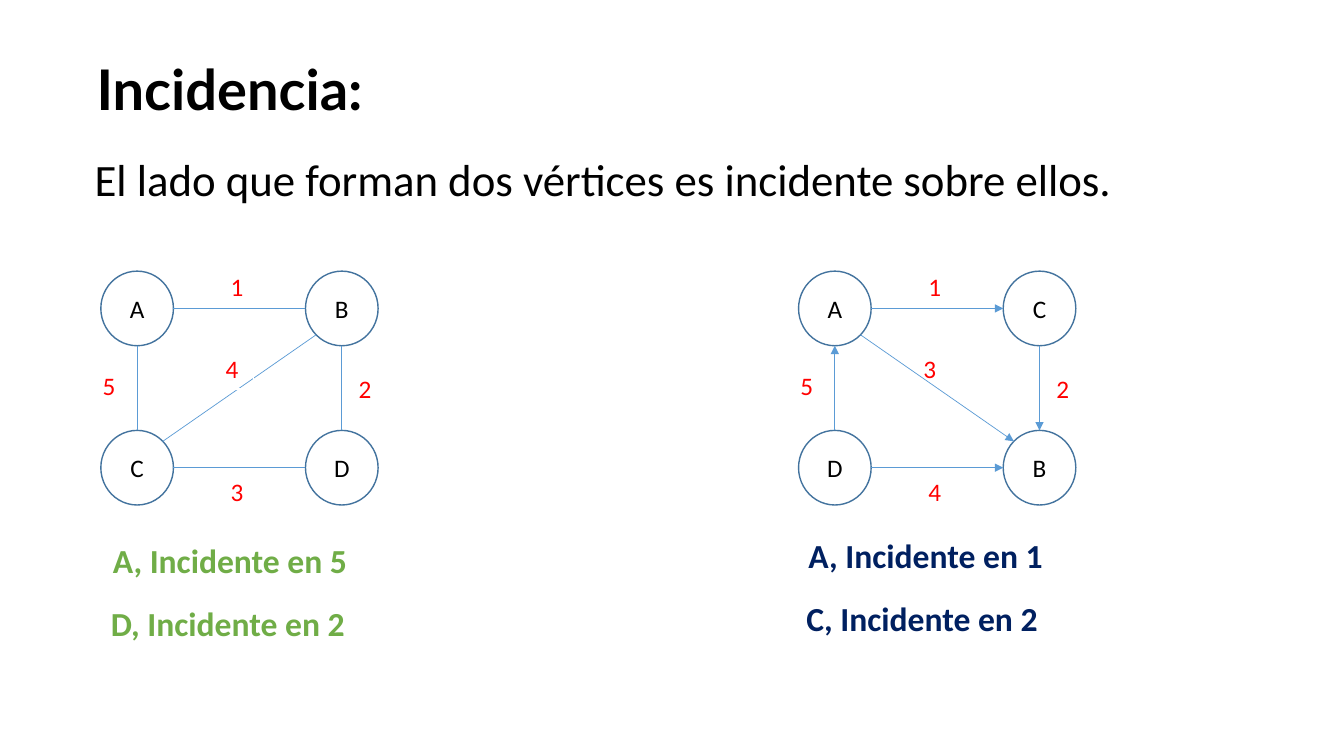
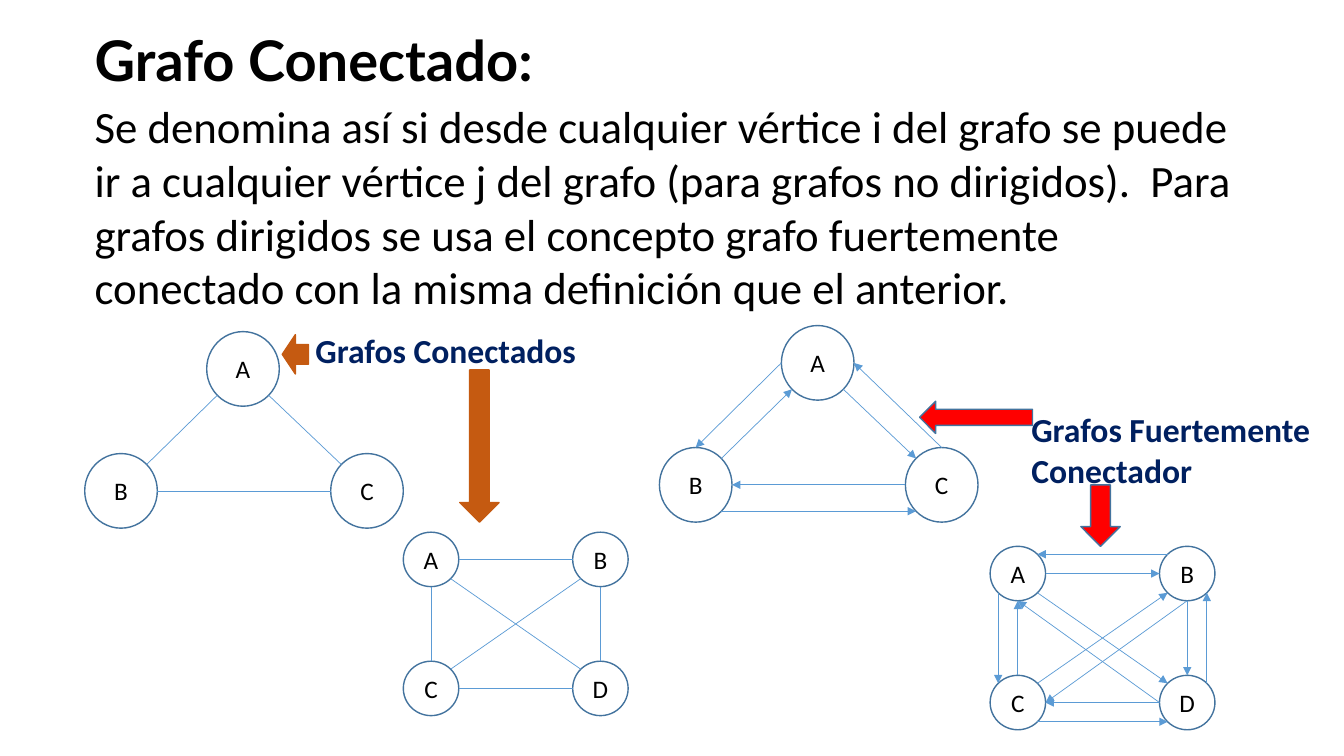
from lxml import etree
from pptx import Presentation
from pptx.dml.color import RGBColor
from pptx.enum import shapes, text
from pptx.oxml import ns
from pptx.util import Inches, Pt

COLORS = {
    "ink": "000000", "paper": "FFFFFF", "node": "43739E", "edge": "5B9BD5",
    "red": "FF0000", "navy": "002060", "green": "70AD47", "rust": "C55A11",
}
TITLE_FONT, BODY_FONT = "Lato", "Calibri"
LARGE_NODE, SMALL_NODE = (0.72, 0.74), (0.55, 0.54)
DIAGONAL = 0.7071  # cosine of 45 degrees

# Points on a node's rim, as offsets from its centre in radii
RIM = {
    "n": (0, -1), "e": (1, 0), "s": (0, 1), "w": (-1, 0),
    "ne": (DIAGONAL, -DIAGONAL), "se": (DIAGONAL, DIAGONAL),
    "sw": (-DIAGONAL, DIAGONAL), "nw": (-DIAGONAL, -DIAGONAL),
}
WEIGHT_SPOTS = {
    "top": (1.19, -0.05), "right": (2.46, 0.96), "bottom": (1.19, 1.99),
    "middle": (1.14, 0.77), "left": (-0.08, 0.93),
}


def rgb(name):
    return RGBColor.from_string(COLORS[name])


def inches(*lengths):
    return [Inches(length) for length in lengths]


def write(shape, words, size, color, bold=False, font=BODY_FONT):
    para = shape.text_frame.paragraphs[0]
    span = para.add_run()
    span.text = words
    span.font.size, span.font.bold, span.font.name = Pt(size), bold, font
    span.font.color.rgb = rgb(color)
    return para


def add_text(page, box, words, size, color="ink", bold=False, font=BODY_FONT):
    shape = page.shapes.add_textbox(*inches(*box))
    shape.text_frame.word_wrap = True
    shape.text_frame.auto_size = text.MSO_AUTO_SIZE.SHAPE_TO_FIT_TEXT
    write(shape, words, size, color, bold, font)


def add_title(page, left, top, words):
    add_text(page, (left, top, 8.04, 0.77), words, 40, bold=True, font=TITLE_FONT)


def add_body(page, top, height, words):
    add_text(page, (0.84, top, 11.73, height), words, 32)


def add_caption(page, left, top, words, color="navy", height=0.5):
    add_text(page, (left, top, 3.15, height), words, 24, color, bold=True)


def add_preset(page, kind, box, fill, line, width=1):
    shape = page.shapes.add_shape(kind, *inches(*box))
    shape.shadow.inherit = False
    if fill:
        shape.fill.solid()
        shape.fill.fore_color.rgb = rgb(fill)
    else:
        shape.fill.background()
    shape.line.color.rgb = rgb(line)
    shape.line.width = Pt(width)
    return shape


def add_node(page, box, name):
    node = add_preset(page, shapes.MSO_SHAPE.OVAL, box, "paper", "node")
    node.text_frame.vertical_anchor = text.MSO_ANCHOR.MIDDLE
    write(node, name, 18, "ink").alignment = text.PP_ALIGN.CENTER


def add_edge(page, start, end, directed):
    edge = page.shapes.add_connector(
        shapes.MSO_CONNECTOR.STRAIGHT, *inches(*start, *end))
    edge.line.color.rgb = rgb("edge")
    edge.line.width = Pt(0.5)
    if directed:
        etree.SubElement(edge.line._get_or_add_ln(), ns.qn("a:tailEnd"), type="triangle")
    etree.SubElement(edge._element.spPr, ns.qn("a:effectLst"))


def add_graph(page, left, top, size, spots, edges, directed=False):
    """Draw nodes at spots (offsets by name) and edges such as "Ae-Bw",
    which runs from the east rim of A to the west rim of B."""
    width, height = size
    for name, (across, down) in spots.items():
        add_node(page, (left + across, top + down, width, height), name)

    def rim_point(end):
        across, down = spots[end[0]]
        x, y = RIM[end[1:]]
        return (left + across + width * (1 + x) / 2,
                top + down + height * (1 + y) / 2)

    for edge in edges.split():
        start, end = edge.split("-")
        add_edge(page, rim_point(start), rim_point(end), directed)


def square(names, across, down):
    corners = [(0, 0), (across, 0), (0, down), (across, down)]
    return dict(zip(names, corners))


def add_weights(page, left, top, weights):
    for spot, weight in weights.items():
        across, down = WEIGHT_SPOTS[spot]
        label = add_preset(page, shapes.MSO_SHAPE.RECTANGLE,
                           (left + across, top + down, 0.37, 0.4), None, "paper", 0.75)
        label.text_frame.vertical_anchor = text.MSO_ANCHOR.TOP
        label.text_frame.auto_size = text.MSO_AUTO_SIZE.SHAPE_TO_FIT_TEXT
        write(label, weight, 18, "red").alignment = text.PP_ALIGN.LEFT


def add_incidence_slide(page):
    add_title(page, 0.86, 0.49, "Incidencia:")
    add_body(page, 1.46, 0.64, "El lado que forman dos vértices es incidente sobre ellos.")
    top, pitch = 2.69, (2.03, 1.58)

    add_graph(page, 1, top, LARGE_NODE, square("ABCD", *pitch),
              "Ae-Bw Bs-Dn Dw-Ce As-Cn Cne-Bsw")
    add_weights(page, 1, top, {"top": "1", "right": "2", "bottom": "3",
                               "middle": "4", "left": "5"})
    add_caption(page, 1.02, 5.31, "A, Incidente en 5", "green")
    add_caption(page, 1, 5.93, "D, Incidente en 2", "green")

    # Weights lie beneath the directed edges, so that no frame cuts an arrow
    add_weights(page, 7.92, top, {"top": "1", "right": "2", "bottom": "4",
                                  "middle": "3", "left": "5"})
    add_graph(page, 7.92, top, LARGE_NODE, square("ACDB", *pitch),
              "Ae-Cw Cs-Bn De-Bw Dn-As Ase-Bnw", directed=True)
    add_caption(page, 7.92, 5.26, "A, Incidente en 1")
    add_caption(page, 7.9, 5.88, "C, Incidente en 2")


def add_connected_slide(page):
    add_title(page, 0.84, 0.2, "Grafo Conectado:")
    add_body(page, 0.93, 2.26,
             "Se denomina así si desde cualquier vértice i del grafo se puede ir a "
             "cualquier vértice j del grafo (para grafos no dirigidos).  Para grafos "
             "dirigidos se usa el concepto grafo fuertemente conectado con la misma "
             "definición que el anterior.")
    triangle = {"A": (1.21, 0), "B": (0, 1.21), "C": (2.44, 1.21)}
    small_square = square("ABCD", 1.68, 1.28)

    add_graph(page, 0.84, 3.29, LARGE_NODE, triangle, "Ase-Cnw Be-Cw Asw-Bne")
    add_graph(page, 4, 5.28, SMALL_NODE, small_square,
              "Ae-Bw Bs-Dn As-Cn Ce-Dw Cne-Bsw Ase-Dnw")
    add_graph(page, 6.54, 3.23, LARGE_NODE, triangle,
              "Ase-Cnw Cw-Be Bne-Asw Aw-Bn Cn-Ae Bse-Csw", directed=True)
    add_graph(page, 9.82, 5.42, SMALL_NODE, small_square,
              "Ae-Bw Bs-Dn Cn-As Dw-Ce Cne-Bsw Ase-Dnw "
              "Bnw-Ane Asw-Cnw Cse-Dsw Dne-Bse Bs-Ce Dw-As", directed=True)

    add_caption(page, 10.13, 4.01, "Grafos Fuertemente Conectador", height=0.91)
    add_caption(page, 3.03, 3.22, "Grafos Conectados")
    left_arrow, down_arrow = shapes.MSO_SHAPE.LEFT_ARROW, shapes.MSO_SHAPE.DOWN_ARROW
    for kind, box, fill, line in [
        (left_arrow, (9.12, 3.98, 1.12, 0.32), "red", "node"),
        (down_arrow, (10.72, 4.81, 0.39, 0.61), "red", "node"),
        (down_arrow, (4.56, 3.67, 0.39, 1.51), "rust", "rust"),
        (left_arrow, (2.8, 3.32, 0.26, 0.39), "rust", "rust"),
    ]:
        add_preset(page, kind, box, fill, line)


def main():
    deck = Presentation()
    deck.slide_width, deck.slide_height = inches(13.33, 7.5)
    for fill_page in (add_incidence_slide, add_connected_slide):
        fill_page(deck.slides.add_slide(deck.slide_layouts[6]))
    deck.save("out.pptx")


if __name__ == "__main__":
    main()
